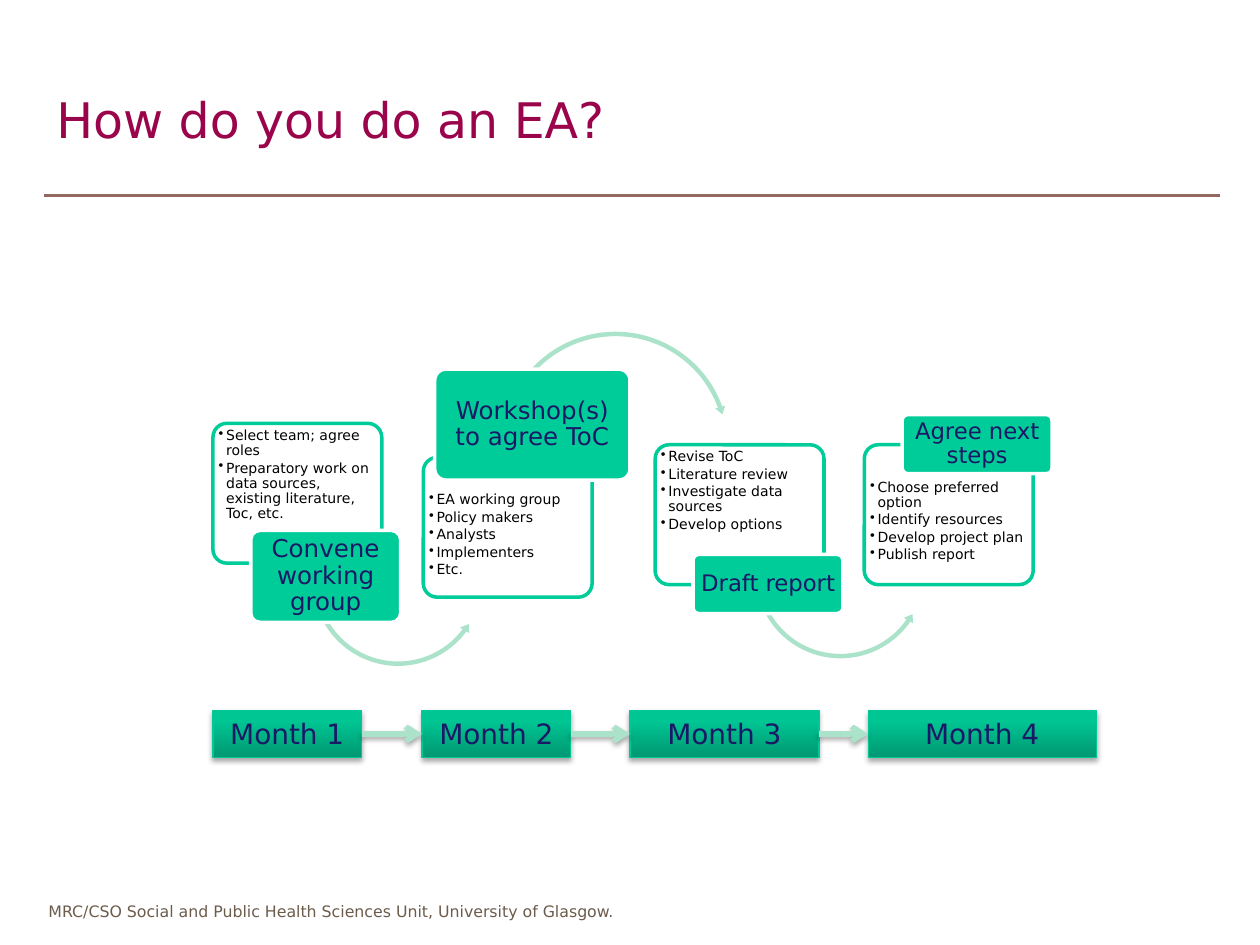
from itertools import pairwise

from pptx import Presentation
from pptx.dml.color import RGBColor
from pptx.enum.shapes import MSO_CONNECTOR, MSO_SHAPE
from pptx.enum.text import MSO_ANCHOR, PP_ALIGN
from pptx.oxml import parse_xml
from pptx.oxml.ns import nsdecls, qn
from pptx.util import Inches, Pt

RECT = MSO_SHAPE.RECTANGLE
ROUNDED = MSO_SHAPE.ROUNDED_RECTANGLE
ARC_OVER = MSO_SHAPE.CIRCULAR_ARROW
ARC_UNDER = MSO_SHAPE.LEFT_CIRCULAR_ARROW
STRAIGHT = MSO_CONNECTOR.STRAIGHT
LEFT, CENTER = PP_ALIGN.LEFT, PP_ALIGN.CENTER
TOP, MIDDLE = MSO_ANCHOR.TOP, MSO_ANCHOR.MIDDLE
SIDE_LEFT, SIDE_RIGHT = 1, 3

FONT = "DejaVu Sans"
GREEN, PALE_GREEN, NAVY = "00CC99", "ABE2CA", "191966"
WHITE, BLACK = "FFFFFF", "000000"
MONTH_STOPS = ((0, "009872"), (80, "00C694"), (100, "00C795"))

WIDTH, HEIGHT = Inches(10), Inches(7.5)
COL, ROW = WIDTH / 100, HEIGHT / 75

PANEL_SIZE = (13.4, 11.1)
BULLET_SIZE = (12.9, 8.2)
MONTH_TOP, MONTH_HEIGHT = 56.4, 3.7

STEPS = [
    dict(corner=(16.9, 33.6), bullet_drop=0.2, label_box=(19.9, 42.1, 11.9, 7.3),
         label="Convene working group", size=14,
         bullets=["Select team; agree roles",
                  "Preparatory work on data sources, existing literature, Toc, etc."],
         arc=(ARC_UNDER, (24.6, 39.1, 14, 14), (0.025, 3.093, 21.994, 91.391, 0.03))),
    dict(corner=(33.6, 36.3), bullet_drop=2.6, label_box=(34.5, 29.3, 15.5, 8.8),
         label="Workshop(s) to agree ToC", size=14,
         bullets=["EA working group", "Policy makers", "Analysts", "Implementers", "Etc."],
         arc=(ARC_OVER, (39.6, 26.1, 18.5, 18.5), (0.019, 2.303, 203.972, 133.786, 0.022))),
    dict(corner=(52, 35.3), bullet_drop=0.2, label_box=(55, 44, 11.9, 4.7),
         label="Draft report", size=13,
         bullets=["Revise ToC", "Literature review", "Investigate data sources",
                  "Develop options"],
         arc=(ARC_UNDER, (59.7, 38.5, 14, 14), (0.025, 3.094, 20.849, 90.245, 0.03))),
    dict(corner=(68.6, 35.3), bullet_drop=2.6, label_box=(71.6, 32.9, 11.9, 4.7),
         label="Agree next steps", size=13,
         bullets=["Choose preferred option", "Identify resources",
                  "Develop project plan", "Publish report"],
         arc=None),
]
MONTHS = [("Month 1", 16.9, 11.8), ("Month 2", 33.5, 11.8),
          ("Month 3", 50, 15), ("Month 4", 68.9, 18.1)]


def color(value):
    return RGBColor.from_string(value)


def place(box):
    left, top, width, height = box
    return round(left * COL), round(top * ROW), round(width * COL), round(height * ROW)


def write(frame, lines, size, ink, align=LEFT, anchor=TOP, insets=(1, 0.5),
          wrap=True, spacing=None, after=None, bullet=None):
    frame.word_wrap = wrap
    frame.vertical_anchor = anchor
    frame.margin_left = frame.margin_right = round(insets[0] * COL)
    frame.margin_top = frame.margin_bottom = round(insets[1] * ROW)
    for index, line in enumerate(lines):
        paragraph = frame.add_paragraph() if index else frame.paragraphs[0]
        paragraph.alignment = align
        paragraph.line_spacing = spacing
        paragraph.space_after = after
        run = paragraph.add_run()
        run.text = line
        run.font.size, run.font.name = Pt(size), FONT
        run.font.color.rgb = color(ink)
        if bullet:
            paragraph.level = 1
            properties = paragraph._p.get_or_add_pPr()
            indent = round(0.6 * COL)
            properties.set("marL", str(indent))
            properties.set("indent", str(-indent))
            properties.append(parse_xml(f'<a:buChar {nsdecls("a")} char="{bullet}"/>'))


def add_text(slide, box, lines, **style):
    write(slide.shapes.add_textbox(*place(box)).text_frame, lines, **style)


def add_block(slide, kind, box, fill, line=None, weight=2, adjustments=()):
    block = slide.shapes.add_shape(kind, *place(box))
    block.shadow.inherit = False
    block.fill.solid()
    block.fill.fore_color.rgb = color(fill)
    if line:
        block.line.color.rgb = color(line)
        block.line.width = Pt(weight)
    else:
        block.line.fill.background()
    for index, value in enumerate(adjustments):
        block.adjustments[index] = value
    return block


def add_line(slide, start, end, ink, weight):
    line = slide.shapes.add_connector(STRAIGHT, round(start[0] * COL), round(start[1] * ROW),
                                      round(end[0] * COL), round(end[1] * ROW))
    line.line.color.rgb = color(ink)
    line.line.width = Pt(weight)
    line._element.spPr.append(parse_xml(f'<a:effectLst {nsdecls("a")}/>'))
    return line


def cast_shadow(item):
    item._element.spPr.find(qn("a:effectLst")).append(parse_xml(
        f'<a:outerShdw {nsdecls("a")} blurRad="{Pt(3.1)}" dist="{Pt(1.8)}" dir="5400000" '
        f'rotWithShape="0"><a:srgbClr val="{BLACK}"><a:alpha val="35000"/></a:srgbClr>'
        '</a:outerShdw>'))


def shade(block, stops):
    marks = "".join(f'<a:gs pos="{share * 1000}"><a:srgbClr val="{tone}"/></a:gs>'
                    for share, tone in stops)
    properties = block._element.spPr
    properties.replace(properties.find(qn("a:solidFill")), parse_xml(
        f'<a:gradFill {nsdecls("a")} rotWithShape="1"><a:gsLst>{marks}</a:gsLst>'
        '<a:lin ang="16200000" scaled="0"/></a:gradFill>'))


def add_heading(slide, box):
    left, top, width, height = box
    add_text(slide, (left, top, width, height), ["How do you do an EA?"],
             size=28, ink="9A044B", anchor=MIDDLE)
    add_line(slide, (left, 15.5), (left + width, 15.5), "91695F", 1.75)


def add_footer(slide, box):
    add_text(slide, box,
             ["MRC/CSO Social and Public Health Sciences Unit, University of Glasgow."],
             size=9, ink="6C5C4C", align=CENTER, wrap=False)


def add_step(slide, corner, bullet_drop, bullets, label_box, label, size, arc):
    left, top = corner
    panel = add_block(slide, ROUNDED, (left, top, *PANEL_SIZE), WHITE, GREEN,
                      adjustments=[0.1])
    panel._element.spPr.find(qn("a:solidFill"))[0].append(
        parse_xml(f'<a:alpha {nsdecls("a")} val="90000"/>'))
    add_text(slide, (left + 0.25, top + bullet_drop, *BULLET_SIZE), bullets,
             size=8, ink=BLACK, insets=(0.2, 0.2), spacing=0.9, after=Pt(1.4), bullet="•")
    if arc:
        kind, arc_box, bends = arc
        add_block(slide, kind, arc_box, PALE_GREEN, adjustments=bends)
    add_block(slide, ROUNDED, label_box, GREEN, WHITE, adjustments=[0.1])
    x, y, width, height = label_box
    add_text(slide, (x + 0.2, y + 0.2, width - 0.4, height - 0.4), [label],
             size=size, ink=NAVY, align=CENTER, anchor=MIDDLE,
             insets=(0.3, 0.2), spacing=0.9)


def add_timeline(slide, top, height):
    blocks = []
    for month, left, width in MONTHS:
        block = add_block(slide, RECT, (left, top, width, height), GREEN, "00C896", 0.75)
        shade(block, MONTH_STOPS)
        cast_shadow(block)
        write(block.text_frame, [month], size=16, ink=NAVY, align=CENTER)
        blocks.append(block)
    for earlier, later in pairwise(blocks):
        arrow = add_line(slide, (0, top), (1, top), "AAE2CA", 3)
        arrow.begin_connect(earlier, SIDE_RIGHT)
        arrow.end_connect(later, SIDE_LEFT)
        arrow.line._get_or_add_ln().append(
            parse_xml(f'<a:tailEnd {nsdecls("a")} type="arrow"/>'))
        cast_shadow(arrow)


def main():
    deck = Presentation()
    deck.slide_width, deck.slide_height = WIDTH, HEIGHT
    slide = deck.slides.add_slide(deck.slide_layouts[6])
    add_footer(slide, (2.5, 71.1, 47.5, 2.5))
    add_heading(slide, (3.5, 5, 93.3, 8.9))
    for step in STEPS:
        add_step(slide, **step)
    add_timeline(slide, MONTH_TOP, MONTH_HEIGHT)
    deck.save("out.pptx")


if __name__ == "__main__":
    main()
